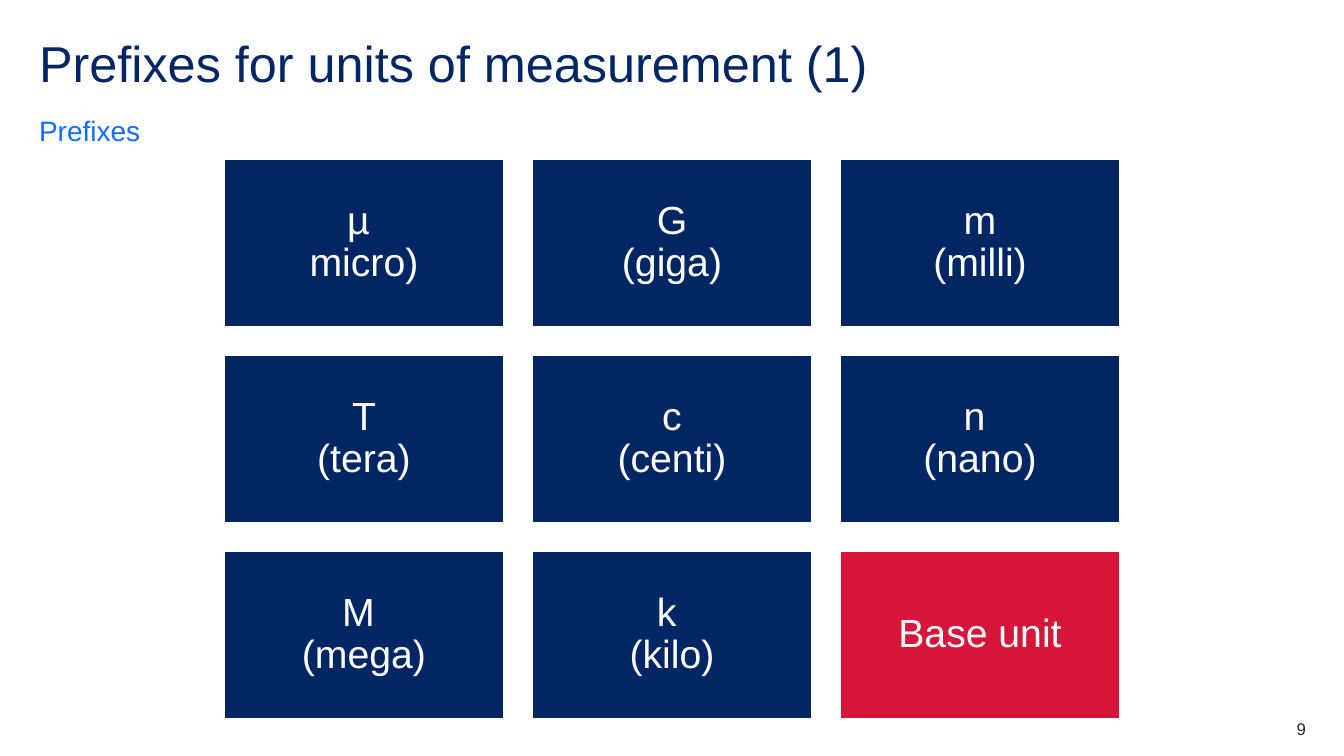
from pptx import Presentation
from pptx.dml.color import RGBColor
from pptx.enum.shapes import MSO_SHAPE
from pptx.enum.text import MSO_ANCHOR, PP_ALIGN
from pptx.util import Emu, Pt

NAVY, BLUE, RED, INK, WHITE = "002664", "146CFD", "D7153A", "22272B", "FFFFFF"
TILES = [
    ["µ \vmicro)", "G\v(giga)", "m\v(milli)"],
    ["T\v(tera)", "c\v(centi)", "n \v(nano)"],
    ["M \v(mega)", "k \v(kilo)", "Base unit"],
]
LEFT, TOP, TILE_W, TILE_H, GAP = 224, 159, 280, 168, 28


def px(n):
    """Turn whole pixels into EMU at 100.8 pixels to the inch."""
    return Emu(round(n * 914400 / 100.8))


def rgb(code):
    """Turn a hex string into a colour."""
    return RGBColor.from_string(code)


def write(s, text, size, color, align=PP_ALIGN.LEFT, anchor=MSO_ANCHOR.TOP,
          spacing=1.0, inset=0):
    """Set and format the single paragraph of a shape."""
    tf = s.text_frame
    tf.word_wrap = True
    tf.vertical_anchor = anchor
    tf.margin_left = tf.margin_right = px(inset)
    tf.margin_top = tf.margin_bottom = px(inset)
    tf.text = text
    p = tf.paragraphs[0]
    p.alignment = align
    p.line_spacing = spacing
    for r in p.runs:
        r.font.name = "Arial"
        r.font.size = Pt(size)
        r.font.color.rgb = rgb(color)


def add_label(slide, x, y, w, h, text, size, color, **style):
    """Add a text box."""
    s = slide.shapes.add_textbox(px(x), px(y), px(w), px(h))
    write(s, text, size, color, **style)


def add_tile(slide, x, y, text, fill):
    """Add a filled tile with centred text."""
    s = slide.shapes.add_shape(MSO_SHAPE.RECTANGLE, px(x), px(y), px(TILE_W), px(TILE_H))
    s.shadow.inherit = False
    s.fill.solid()
    s.fill.fore_color.rgb = rgb(fill)
    s.line.color.rgb = rgb(WHITE)
    s.line.width = Pt(1)
    write(s, text, 28, WHITE, align=PP_ALIGN.CENTER, anchor=MSO_ANCHOR.MIDDLE,
          spacing=0.9, inset=20)


def main():
    """Build the slide and save it."""
    prs = Presentation()
    prs.slide_width, prs.slide_height = px(1344), px(756)
    slide = prs.slides.add_slide(prs.slide_layouts[6])
    add_label(slide, 39, 39, 1266, 60, "Prefixes for units of measurement (1)", 36, NAVY,
              spacing=0.9)
    add_label(slide, 39, 108, 1266, 39, "Prefixes", 20, BLUE,
              anchor=MSO_ANCHOR.BOTTOM, spacing=1.5)
    for row, texts in enumerate(TILES):
        for col, text in enumerate(texts):
            add_tile(slide, LEFT + col * (TILE_W + GAP), TOP + row * (TILE_H + GAP),
                     text, RED if text == "Base unit" else NAVY)
    add_label(slide, 1226, 719, 80, 20, "9", 12, INK, align=PP_ALIGN.RIGHT)
    prs.save("out.pptx")


if __name__ == "__main__":
    main()
